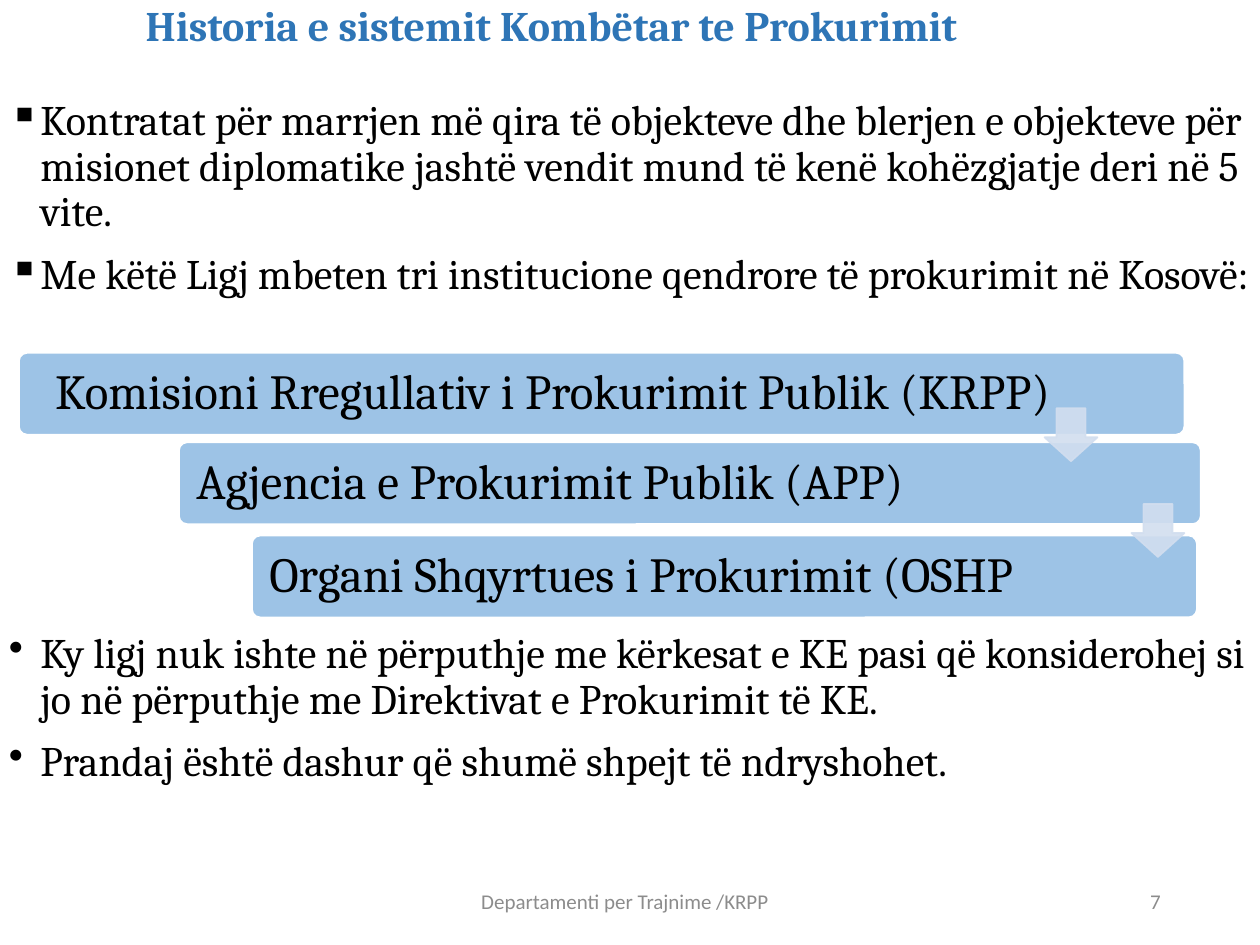
from lxml import etree
from pptx import Presentation
from pptx.dml.color import RGBColor
from pptx.enum import shapes, text
from pptx.oxml.ns import qn
from pptx.util import Inches, Pt

TITLE = "Historia e sistemit Kombëtar te Prokurimit"
BODY = [
    (0.75, 2.0, "▪", [
        "Kontratat për marrjen më qira të objekteve dhe blerjen e objekteve për misionet diplomatike jashtë vendit mund të kenë kohëzgjatje deri në 5 vite.",
        "Me këtë Ligj mbeten tri institucione qendrore të prokurimit në Kosovë:",
    ]),
    (4.98, 1.5, "•", [
        "Ky ligj nuk ishte në përputhje me kërkesat e KE pasi që konsiderohej si jo në përputhje me Direktivat e Prokurimit të KE.",
        "Prandaj është dashur që shumë shpejt të ndryshohet.",
    ]),
]
INSTITUTIONS = [
    (0.15, 2.8, 9.25, "c", "Komisioni Rregullativ i Prokurimit Publik (KRPP)"),
    (1.42, 3.51, 8.11, "l", "Agjencia e Prokurimit Publik (APP)"),
    (2, 4.25, 7.5, "l", "Organi Shqyrtues i Prokurimit (OSHP"),
]
ARROWS = [(8.29, 3.24), (8.98, 4)]
FOOTER = "Departamenti per Trajnime /KRPP"
PAGE = "7"

ALIGN = {"l": text.PP_ALIGN.LEFT, "c": text.PP_ALIGN.CENTER, "r": text.PP_ALIGN.RIGHT}


def rgb(color):
    return RGBColor.from_string(color)


def write(sp, lines, size=24, font="Cambria", color="000000", bold=False, align="l",
          middle=False, bullet=None, spacing=0.9, margins=(0.07, 0.04, 0.07, 0.04)):
    tf = sp.text_frame
    tf.word_wrap = True
    tf.vertical_anchor = text.MSO_ANCHOR.MIDDLE if middle else text.MSO_ANCHOR.TOP
    tf.margin_left, tf.margin_top, tf.margin_right, tf.margin_bottom = map(Inches, margins)
    for i, line in enumerate(lines):
        p = tf.add_paragraph() if i else tf.paragraphs[0]
        p.alignment = ALIGN[align]
        p.line_spacing = spacing
        if i:
            p.space_before = Pt(10)
        if bullet:
            pPr = p._p.get_or_add_pPr()
            pPr.set("marL", str(Inches(0.25)))
            pPr.set("indent", str(-Inches(0.25)))
            etree.SubElement(pPr, qn("a:buChar"), char=bullet)
        r = p.add_run()
        r.text = line
        r.font.size = Pt(size)
        r.font.name = font
        r.font.bold = bold
        r.font.color.rgb = rgb(color)


def add_text(s, box, lines, **fmt):
    write(s.shapes.add_textbox(*map(Inches, box)), lines, **fmt)


def add_preset(s, kind, box, adjustments, fill, line, alpha=None):
    sp = s.shapes.add_shape(kind, *map(Inches, box))
    sp.shadow.inherit = False
    for i, value in enumerate(adjustments):
        sp.adjustments[i] = value
    sp.fill.solid()
    sp.fill.fore_color.rgb = rgb(fill)
    sp.line.color.rgb = rgb(line)
    sp.line.width = Pt(1)
    if alpha:
        for clr in sp._element.spPr.iter(qn("a:srgbClr")):
            etree.SubElement(clr, qn("a:alpha"), val=str(alpha * 1000))
    return sp


def main():
    prs = Presentation()
    prs.slide_width, prs.slide_height = Inches(10), Inches(7.5)
    s = prs.slides.add_slide(prs.slide_layouts[6])

    add_text(s, (0.33, 0, 8.09, 0.75), [TITLE], color="2E75B6", bold=True, align="c")
    for top, height, bullet, lines in BODY:
        add_text(s, (0, top, 10, height), lines, bullet=bullet)

    for left, top, width, align, name in INSTITUTIONS:
        bar = add_preset(s, shapes.MSO_SHAPE.ROUNDED_RECTANGLE, (left, top, width, 0.65),
                         [0.1], "9DC3E6", "FFFFFF")
        write(bar, [name], size=28, align=align, middle=True, margins=(0.12, 0.12, 0.9, 0.12))
    for left, top in ARROWS:
        add_preset(s, shapes.MSO_SHAPE.DOWN_ARROW, (left, top, 0.42, 0.42),
                   [0.45, 0.55], "D2DEEF", "D2DEEF", alpha=90)
    for sp in s.shapes:
        if sp.shape_type == shapes.MSO_SHAPE_TYPE.AUTO_SHAPE and sp.auto_shape_type == shapes.MSO_SHAPE.DOWN_ARROW:
            sp.adjustments[0], sp.adjustments[1] = 0.55, 0.45

    small = dict(size=12, font="Calibri", color="8C8C8C", middle=True, spacing=1.0,
                 margins=(0.1, 0.05, 0.1, 0.05))
    add_text(s, (3.27, 6.95, 3.38, 0.4), [FOOTER], align="c", **small)
    add_text(s, (7.06, 6.95, 2.25, 0.4), [PAGE], align="r", **small)
    prs.save("out.pptx")


if __name__ == "__main__":
    main()
